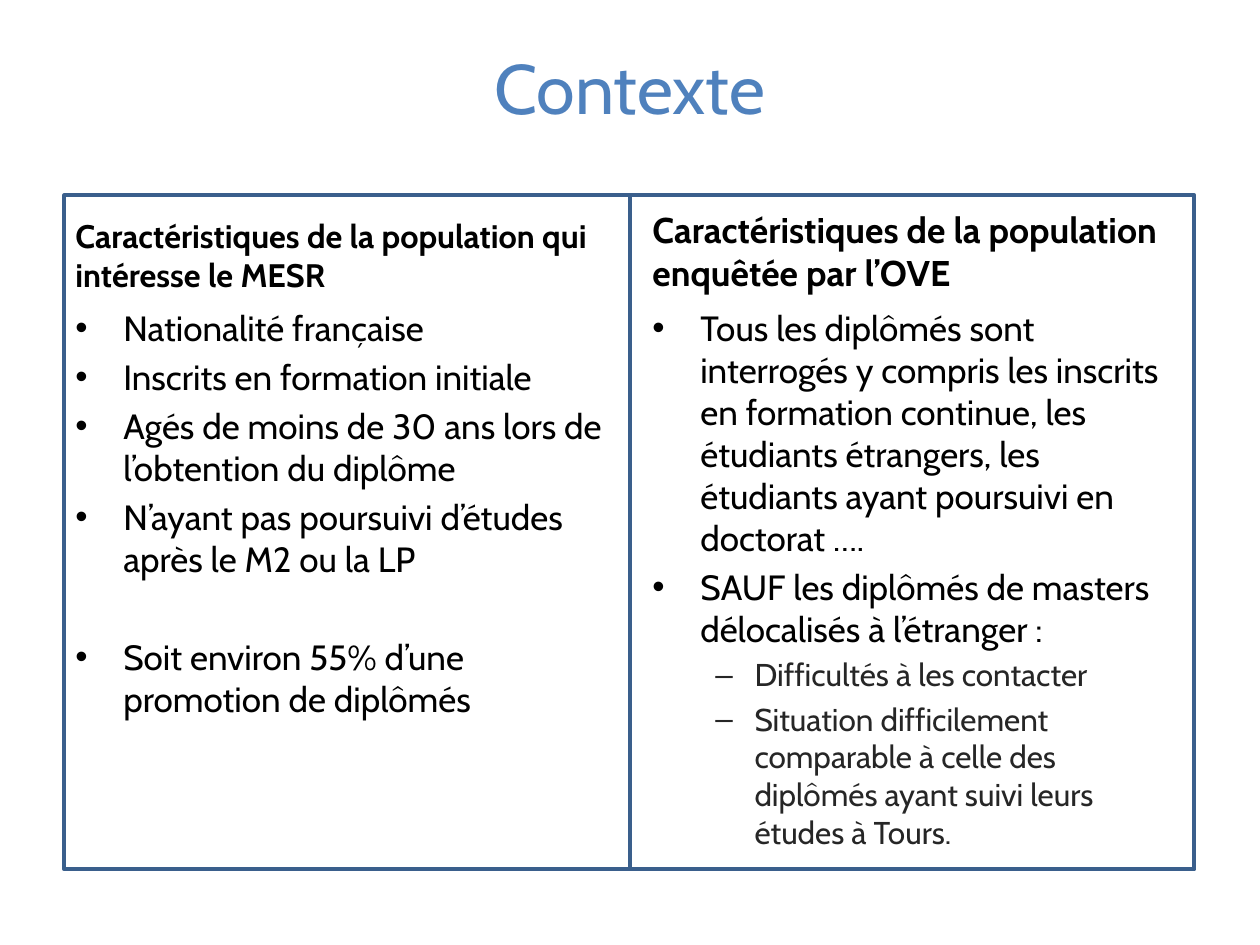
from dataclasses import dataclass

import pptx
import pptx.dml.color
import pptx.enum.shapes
import pptx.enum.text
import pptx.util
from pptx.util import Inches
from lxml import etree


@dataclass
class Theme:
    font: str = "Cabin"
    title: str = "4F81BD"
    text: str = "000000"
    detail: str = "262626"
    frame: str = "3A5F8C"
    title_size: float = 40
    bullet_size: float = 20
    detail_size: float = 18


theme = Theme()
ANCHOR = pptx.enum.text.MSO_ANCHOR
# Bullet levels: character, left margin, hanging indent, size, colour, space before
LEVELS = [
    ("•", 0.38, 0.38, theme.bullet_size, theme.text, 4),
    ("–", 0.81, 0.31, theme.detail_size, theme.detail, 3.6),
]
CONCLUSION_GAP = 32

# Columns: text left, frame left, frame width, heading, heading size,
# then bullets as (level, text, space before or None for the level's own)
COLUMNS = [
    (0.5, 0.51, 4.49, "Caractéristiques de la population qui intéresse le MESR", 18.6, [
        (0, "Nationalité française", 0),
        (0, "Inscrits en formation initiale", None),
        (0, "Agés de moins de 30 ans lors de l’obtention du diplôme", None),
        (0, "N’ayant pas poursuivi d’études après le M2 ou la LP", None),
        (0, "Soit environ 55% d’une promotion de diplômés", CONCLUSION_GAP),
    ]),
    (5.08, 5, 4.48, "Caractéristiques de la population enquêtée par l’OVE", 20.4, [
        (0, "Tous les diplômés sont interrogés y compris les inscrits en formation "
            "continue, les étudiants étrangers, les étudiants ayant poursuivi en "
            "doctorat ….", 0),
        (0, "SAUF les diplômés de masters délocalisés à l’étranger :", None),
        (1, "Difficultés à les contacter", None),
        (1, "Situation difficilement comparable à celle des diplômés ayant suivi "
            "leurs études à Tours.", None),
    ]),
]

prs = pptx.Presentation()
prs.slide_width, prs.slide_height = Inches(10), Inches(7.5)
s = prs.slides.add_slide(prs.slide_layouts[6])


def add_text_frame(left, top, width, height, anchor):
    tf = s.shapes.add_textbox(
        Inches(left), Inches(top), Inches(width), Inches(height)).text_frame
    tf.word_wrap = True
    tf.vertical_anchor = anchor
    return tf


def write(p, text, size, color, bold=False):
    p.text = text
    for r in p.runs:
        r.font.name = theme.font
        r.font.size = pptx.util.Pt(size)
        r.font.bold = bold
        r.font.color.rgb = pptx.dml.color.RGBColor.from_string(color)


tf = add_text_frame(0.5, 0.3, 9, 0.77, ANCHOR.MIDDLE)
write(tf.paragraphs[0], "Contexte", theme.title_size, theme.title)
tf.paragraphs[0].alignment = pptx.enum.text.PP_ALIGN.CENTER

for text_left, frame_left, frame_width, heading, heading_size, bullets in COLUMNS:
    tf = add_text_frame(text_left, 1.68, 4.42, 0.7, ANCHOR.BOTTOM)
    write(tf.paragraphs[0], heading, heading_size, theme.text, bold=True)

    tf = add_text_frame(text_left, 2.38, 4.42, 4.32, ANCHOR.TOP)
    for i, (level, text, gap) in enumerate(bullets):
        char, margin, hanging, size, color, level_gap = LEVELS[level]
        p = tf.add_paragraph() if i else tf.paragraphs[0]
        p.level = level
        pPr = p._p.get_or_add_pPr()
        pPr.set("marL", str(Inches(margin)))
        pPr.set("indent", str(-Inches(hanging)))
        p.space_before = pptx.util.Pt(level_gap if gap is None else gap)
        for tag, key, value in (("a:buFont", "typeface", "Arial"),
                                ("a:buChar", "char", char)):
            etree.SubElement(pPr, pptx.oxml.ns.qn(tag)).set(key, value)
        write(p, text, size, color)

    sp = s.shapes.add_shape(
        pptx.enum.shapes.MSO_SHAPE.RECTANGLE,
        Inches(frame_left), Inches(1.55), Inches(frame_width), Inches(5.35))
    sp.shadow.inherit = False
    sp.fill.background()
    sp.line.color.rgb = pptx.dml.color.RGBColor.from_string(theme.frame)
    sp.line.width = pptx.util.Pt(2.25)

prs.save("out.pptx")
